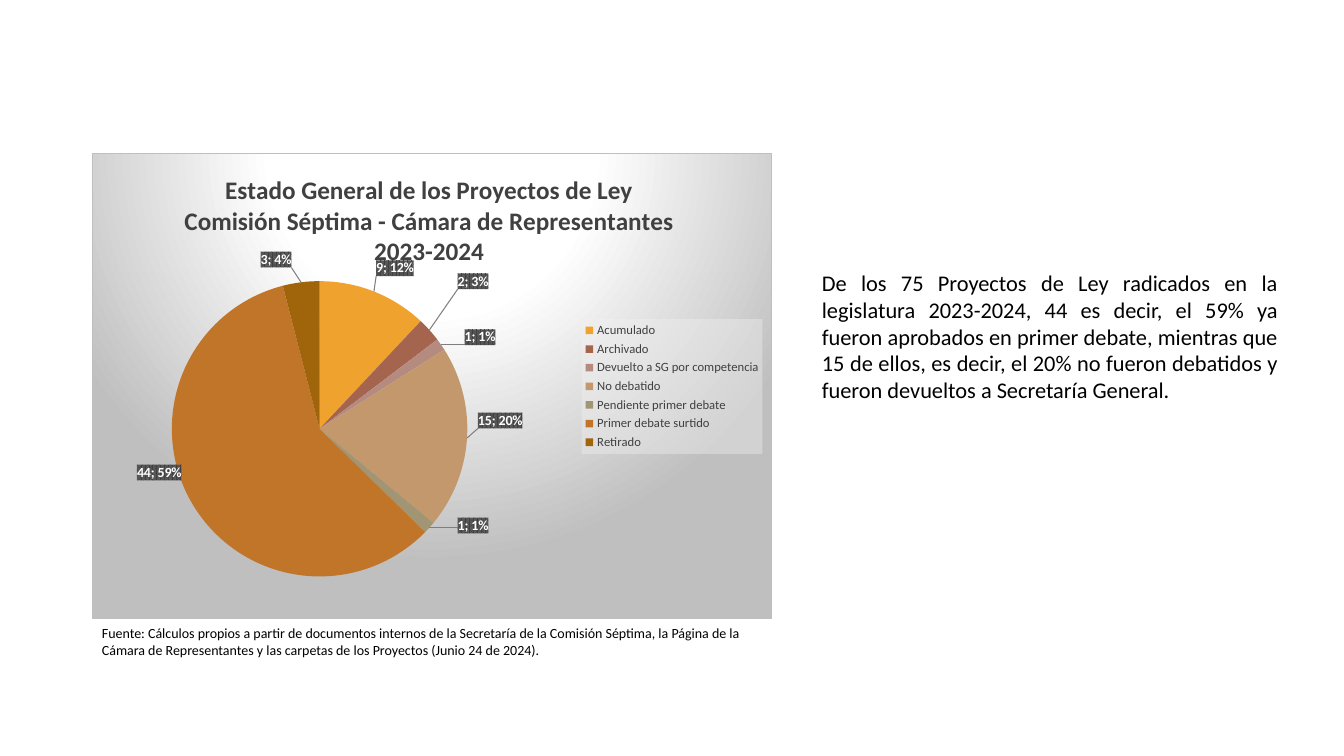
"""Builds a slide with a pie chart of the bills' status, its source and a comment."""
from copy import deepcopy

from pptx import Presentation
from pptx import util as u
from pptx.chart import data as chart_data
from pptx.dml import color
from pptx.enum import chart as charts
from pptx.enum import text
from pptx.oxml import ns, parse_xml

SCALE = 914400 / 100.8
FONT = "Calibri"
COLORS = {
    "text": "000000", "chart_text": "404040", "label_text": "FFFFFF",
    "label_back": "595959", "light": "FFFFFF", "border": "BFBFBF",
    "legend": "F2F2F2", "leader": "7F7F7F",
}
CHART_WIDTH, CHART_HEIGHT = 680, 466
STATUSES = [
    ("Acumulado", 9, "F0A22E", (0, -10)),
    ("Archivado", 2, "A5644E", (24, -37)),
    ("Devuelto a SG por competencia", 1, "B58B80", (19, 4)),
    ("No debatido", 15, "C3986D", (5, -18)),
    ("Pendiente primer debate", 1, "A19574", (24, -14)),
    ("Primer debate surtido", 44, "C17529", (-5, -41)),
    ("Retirado", 3, "A0640B", (-9, -9)),
]
TITLE_LINES = [
    "Estado General de los Proyectos de Ley",
    "Comisión Séptima - Cámara de Representantes",
    "2023-2024",
]
TEXTS = [
    ((812, 264, 476, 173), 16, text.PP_ALIGN.JUSTIFY,
     "De los 75 Proyectos de Ley radicados en la legislatura 2023-2024, 44 es decir, "
     "el 59% ya fueron aprobados en primer debate, mientras que 15 de ellos, es decir, "
     "el 20% no fueron debatidos y fueron devueltos a Secretaría General."),
    ((92, 620, 680, 44), 10, text.PP_ALIGN.LEFT,
     "Fuente: Cálculos propios a partir de documentos internos de la Secretaría de la "
     "Comisión Séptima, la Página de la Cámara de Representantes y las carpetas de los "
     "Proyectos (Junio 24 de 2024)."),
]


def format_font(font, size, color_name, bold=False):
    for name, value in {"name": FONT, "size": u.Pt(size), "bold": bold}.items():
        setattr(font, name, value)
    font.color.rgb = color.RGBColor.from_string(COLORS[color_name])


def chart_xml(tag, content):
    return parse_xml(f'<c:{tag} {ns.nsdecls("c", "a")}>{content}</c:{tag}>')


presentation = Presentation()
presentation.slide_width = round(1344 * SCALE)
presentation.slide_height = round(756 * SCALE)
slide = presentation.slides.add_slide(presentation.slide_layouts[6])

for box, size, alignment, wording in TEXTS:
    shape = slide.shapes.add_textbox(*(round(length * SCALE) for length in box))
    shape.text_frame.word_wrap = True
    paragraph = shape.text_frame.paragraphs[0]
    paragraph.text = wording
    paragraph.alignment = alignment
    format_font(paragraph.font, size, "text")

values = chart_data.CategoryChartData()
values.categories = [status[0] for status in STATUSES]
values.add_series("Series 1", [status[1] for status in STATUSES])
chart_box = (round(length * SCALE) for length in (92, 153, CHART_WIDTH, CHART_HEIGHT))
chart = slide.shapes.add_chart(charts.XL_CHART_TYPE.PIE, *chart_box, values).chart
format_font(chart.font, 10, "text")
plot = chart.plots[0]
plot.vary_by_categories = True
series = plot.series[0]

chart.has_title = True
title_frame = chart.chart_title.text_frame
for index, line in enumerate(TITLE_LINES):
    paragraph = title_frame.add_paragraph() if index else title_frame.paragraphs[0]
    paragraph.text = line
    paragraph.alignment = text.PP_ALIGN.CENTER
    format_font(paragraph.font, 18, "chart_text", True)
    format_font(paragraph.runs[0].font, 18, "chart_text", True)

chart.has_legend = True
legend = chart.legend
legend.position = charts.XL_LEGEND_POSITION.RIGHT
legend.include_in_layout = False
format_font(legend.font, 9, "chart_text")

chart_space = chart.element
title_element, plot_area, legend_element = (
    chart_space.find(f".//{ns.qn(tag)}") for tag in ("c:title", "c:plotArea", "c:legend"))
legend_overlay = legend_element.find(ns.qn("c:overlay"))
legend_overlay.addnext(chart_xml("spPr", (
    f'<a:solidFill><a:srgbClr val="{COLORS["legend"]}"><a:alpha val="39000"/>'
    '</a:srgbClr></a:solidFill>')))

for parent, following, target, place in [
    (title_element, title_element.find(ns.qn("c:overlay")), "", (89, 17)),
    (plot_area, plot_area.find(ns.qn("c:pieChart")),
     '<c:layoutTarget val="inner"/>', (46, 128, 363, 296)),
    (legend_element, legend_overlay, "", (490, 166, 181, 135)),
]:
    for old_layout in parent.findall(ns.qn("c:layout")):
        parent.remove(old_layout)
    fractions = "".join(
        f'<c:{name} val="{length / whole:.4f}"/>'
        for name, length, whole in zip("xywh", place, (CHART_WIDTH, CHART_HEIGHT) * 2))
    fractions = fractions.replace("c:w ", "c:w ").replace("c:h ", "c:h ")
    following.addprevious(chart_xml("layout", (
        f'<c:manualLayout>{target}<c:xMode val="edge"/><c:yMode val="edge"/>'
        f'{fractions}</c:manualLayout>')))

stops = "".join(
    f'<a:gs pos="{position}"><a:srgbClr val="{COLORS[name]}"/></a:gs>'
    for position, name in [(0, "light"), (39000, "light"), (100000, "border")])
chart_space.find(ns.qn("c:txPr")).addprevious(chart_xml("spPr", (
    f'<a:gradFill><a:gsLst>{stops}</a:gsLst><a:path path="circle">'
    '<a:fillToRect l="50000" t="-80000" r="50000" b="180000"/></a:path></a:gradFill>'
    f'<a:ln w="9525"><a:solidFill><a:srgbClr val="{COLORS["border"]}"/></a:solidFill></a:ln>')))

labels = series.data_labels
for name, value in {
    "show_value": True, "show_percentage": True,
    "position": charts.XL_LABEL_POSITION.BEST_FIT,
}.items():
    setattr(labels, name, value)
format_font(labels.font, 10, "label_text", True)
label_list = series._element.find(ns.qn("c:dLbls"))
label_list.find(ns.qn("c:txPr")).addprevious(chart_xml("spPr", (
    f'<a:pattFill prst="pct75"><a:fgClr><a:srgbClr val="{COLORS["chart_text"]}"/></a:fgClr>'
    f'<a:bgClr><a:srgbClr val="{COLORS["label_back"]}"/></a:bgClr></a:pattFill>')))
for old_leader in label_list.findall(ns.qn("c:showLeaderLines")):
    label_list.remove(old_leader)
label_list.append(chart_xml("separator", "; "))
shared_format = list(label_list)

for index, (_, _, fill, (right, down)) in enumerate(STATUSES):
    slice_fill = series.points[index].format.fill
    slice_fill.solid()
    slice_fill.fore_color.rgb = color.RGBColor.from_string(fill)
    label = chart_xml("dLbl", (
        f'<c:idx val="{index}"/><c:layout><c:manualLayout>'
        f'<c:x val="{right / CHART_WIDTH:.4f}"/><c:y val="{down / CHART_HEIGHT:.4f}"/>'
        '</c:manualLayout></c:layout>'))
    label.extend(deepcopy(element) for element in shared_format)
    label_list.insert(index, label)

label_list.append(parse_xml(f'<c:showLeaderLines {ns.nsdecls("c")} val="1"/>'))
label_list.append(chart_xml("leaderLines", (
    '<c:spPr><a:ln w="9525"><a:solidFill>'
    f'<a:srgbClr val="{COLORS["leader"]}"/></a:solidFill></a:ln></c:spPr>')))

presentation.save("out.pptx")
